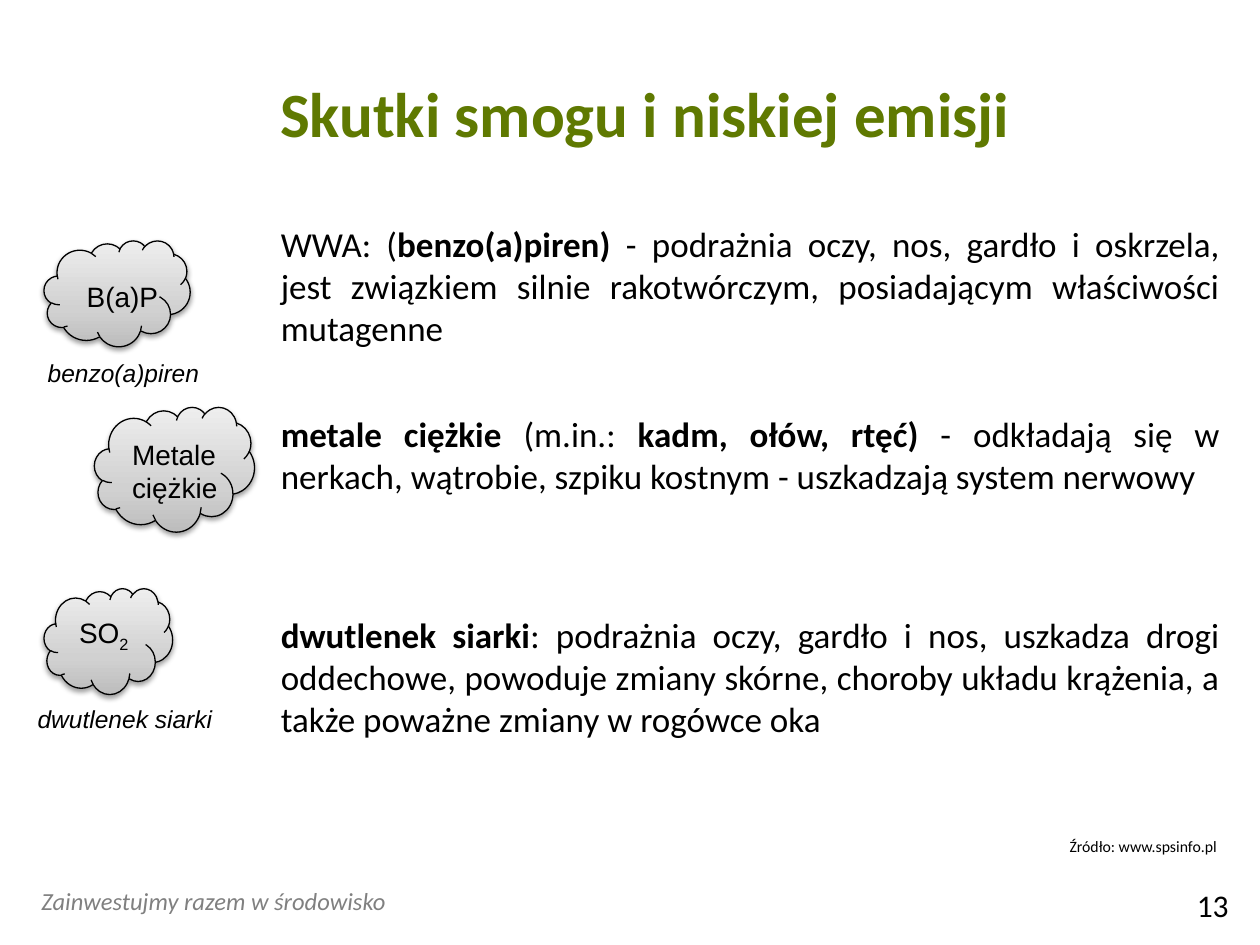
import copy
import pptx
import pptx.util
import pptx.oxml
import pptx.oxml.ns
import pptx.dml.color
import pptx.enum.shapes
import pptx.enum.text

Inches = pptx.util.Inches
Pt = pptx.util.Pt
ALIGN = pptx.enum.text.PP_ALIGN
ANCHOR = pptx.enum.text.MSO_ANCHOR
qn = pptx.oxml.ns.qn

PLAIN = {"size": 20, "name": "Calibri", "color": "000000"}
BOLD = {**PLAIN, "bold": True}
TITLE = {**BOLD, "size": 36, "color": "5F7901"}
FOOT = {**PLAIN, "size": 14, "color": "808080", "italic": True}
PAGE = {**PLAIN, "size": 18}
SOURCE = {**PLAIN, "size": 9}
NAME = {**PLAIN, "size": 16, "name": "Arial"}
NOTE = {**NAME, "size": 14, "italic": True}

GRADE = [(0, "BDBDBD"), (0.35, "D1D1D1"), (1, "EEEEEE")]
LINE = 24.4
GAP = 6

EFFECTS = [
    (0, [("WWA: (", PLAIN), ("benzo(a)piren) ", BOLD),
         ("- podrażnia oczy, nos, gardło i oskrzela, jest związkiem silnie "
          "rakotwórczym, posiadającym właściwości mutagenne", PLAIN)]),
    (1, [("metale ciężkie ", BOLD), ("(m.in.: ", PLAIN),
         ("kadm, ołów, rtęć)", BOLD),
         (" - odkładają się w nerkach, wątrobie, szpiku kostnym - "
          "uszkadzają system nerwowy", PLAIN)]),
    (2, [("dwutlenek siarki", BOLD),
         (": podrażnia oczy, gardło i nos, uszkadza drogi oddechowe, "
          "powoduje zmiany skórne, choroby układu krążenia, a także "
          "poważne zmiany w rogówce oka", PLAIN)]),
]

CLOUDS = [
    ((0.35, 4.67, 1.02, 0.84), (0.53, 4.84, 1.2, 0.37),
     [[("SO", NAME), ("2", {**NAME, "base": -25000})]]),
    ((0.35, 1.91, 1.16, 0.84), (0.59, 2.17, 1.2, 0.37),
     [[("B(a)P", NAME)]]),
    ((0.75, 3.23, 1.27, 0.99), (0.95, 3.42, 1.2, 0.64),
     [[("Metale", NAME)], [("ciężkie", NAME)]]),
]

TEXTS = [
    ((0.23, 6.98, 4.22, 0.34), "Zainwestujmy razem w środowisko", FOOT, {}),
    ((8.39, 6.59, 1.39, 0.25), "Źródło: www.spsinfo.pl", SOURCE,
     {"word_wrap": False}),
    ((7.52, 6.98, 2.33, 0.4), "13", PAGE, {"alignment": ALIGN.RIGHT}),
    ((0.59, 0.28, 9.06, 1.22), "Skutki smogu i niskiej emisji", TITLE,
     {"alignment": ALIGN.CENTER, "vertical_anchor": ANCHOR.MIDDLE}),
    ((0.2, 5.54, 1.82, 0.34), "dwutlenek siarki", NOTE, {}),
    ((0.28, 2.79, 1.82, 0.34), "benzo(a)piren", NOTE, {}),
]

SHADOW = (
    '<a:outerShdw %s blurRad="%d" dist="%d" dir="5400000" rotWithShape="0">'
    '<a:srgbClr val="000000"><a:alpha val="38000"/></a:srgbClr>'
    "</a:outerShdw>" % (pptx.oxml.ns.nsdecls("a"), Pt(3.1), Pt(1.6))
)


def paint(text):
    return pptx.dml.color.RGBColor.from_string(text)


def style(font, form):
    for key, value in form.items():
        if key == "color":
            font.color.rgb = paint(value)
        elif key == "base":
            font._element.set("baseline", str(value))
        else:
            setattr(font, key, Pt(value) if key == "size" else value)


def write(slide, place, paras, form):
    frame = slide.shapes.add_textbox(*map(Inches, place)).text_frame
    form = {"word_wrap": True, **form}
    align = form.pop("alignment", ALIGN.LEFT)
    for key, value in form.items():
        setattr(frame, key, value)
    for i, runs in enumerate(paras):
        para = frame.add_paragraph() if i else frame.paragraphs[0]
        para.alignment = align
        for text, font in runs:
            run = para.add_run()
            run.text = text
            style(run.font, font)
    return frame


def cloud(slide, place):
    shape = slide.shapes.add_shape(
        pptx.enum.shapes.MSO_SHAPE.CLOUD, *map(Inches, place))
    fill = shape.fill
    fill.gradient()
    fill.gradient_angle = 90
    props = shape._element.spPr
    stops = props.find(".//" + qn("a:gsLst"))
    stops.insert(1, copy.deepcopy(stops[0]))
    for stop, (spot, tone) in zip(fill.gradient_stops, GRADE):
        stop.position = spot
        stop.color.rgb = paint(tone)
    shape.line.color.rgb = paint("000000")
    shape.line.width = Pt(0.75)
    shape.shadow.inherit = False
    props.find(qn("a:effectLst")).append(pptx.oxml.parse_xml(SHADOW))


def main():
    deck = pptx.Presentation()
    deck.slide_width, deck.slide_height = Inches(10), Inches(7.5)
    slide = deck.slides.add_slide(deck.slide_layouts[6])
    for place, text, font, form in TEXTS:
        write(slide, place, [[(text, font)]], form)
    body = write(slide, (2.13, 1.72, 7.65, 4.57),
                 [runs for _, runs in EFFECTS], {"alignment": ALIGN.JUSTIFY})
    for para, (skip, _) in zip(body.paragraphs, EFFECTS):
        para.space_before = Pt(skip * (LINE + GAP) + GAP if skip else 0)
    for place, spot, paras in CLOUDS:
        cloud(slide, place)
        write(slide, spot, paras, {})
    deck.save("out.pptx")


if __name__ == "__main__":
    main()
